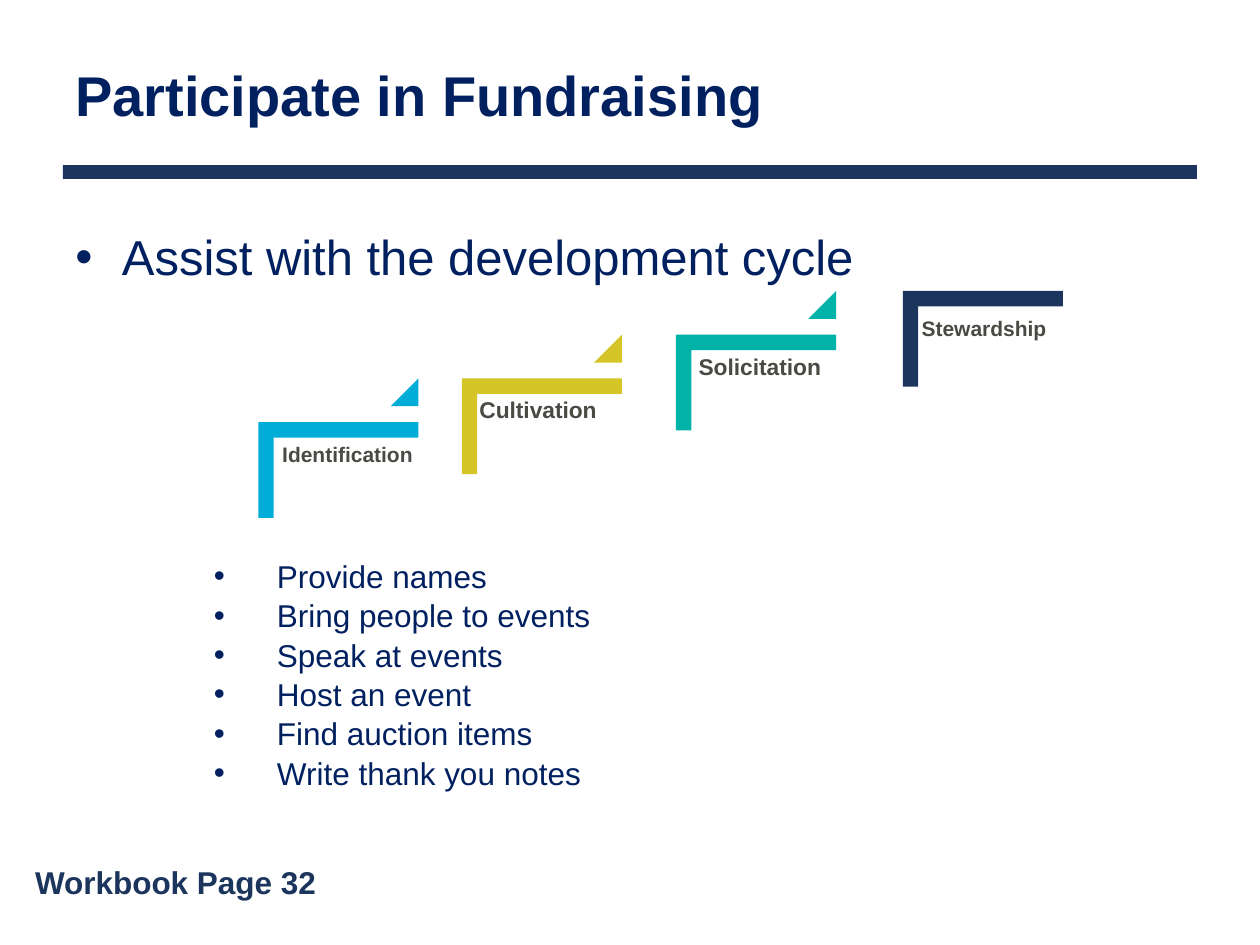
from dataclasses import dataclass

from lxml import etree
from pptx import Presentation
from pptx.dml.color import RGBColor
from pptx.enum.shapes import MSO_SHAPE
from pptx.enum.text import MSO_ANCHOR
from pptx.oxml.ns import qn
from pptx.util import Inches, Pt

RECTANGLE = MSO_SHAPE.RECTANGLE
CORNER = MSO_SHAPE.CORNER
TRIANGLE = MSO_SHAPE.ISOSCELES_TRIANGLE
TOP, MIDDLE = MSO_ANCHOR.TOP, MSO_ANCHOR.MIDDLE

# The slide is a grid of 100 columns by 75 rows
SLIDE_WIDTH, SLIDE_HEIGHT = Inches(10), Inches(7.5)
COLUMN, ROW = SLIDE_WIDTH / 100, SLIDE_HEIGHT / 75


@dataclass(frozen=True)
class Theme:
    font: str = "Arial"
    text: str = "002060"
    navy: str = "1C355D"
    blue: str = "00ADD9"
    yellow: str = "D5C527"
    teal: str = "00B2A8"
    label: str = "4A4A44"
    title_size: int = 32
    body_size: int = 28
    list_size: int = 18


@dataclass(frozen=True)
class Box:
    """A place on the grid, in columns and rows."""
    left: float
    top: float
    width: float
    height: float

    def inside(self, left, top, width, height):
        return Box(self.left + left, self.top + top, width, height)

    def lengths(self):
        return (round(self.left * COLUMN), round(self.top * ROW),
                round(self.width * COLUMN), round(self.height * ROW))


THEME = Theme()


def add_filled_shape(shapes, kind, box, color):
    shape = shapes.add_shape(kind, *box.lengths())
    shape.shadow.inherit = False
    shape.fill.solid()
    shape.fill.fore_color.rgb = RGBColor.from_string(color)
    shape.line.fill.background()
    return shape


def add_text(shapes, box, lines, size, color, bold=False, anchor=TOP,
             line_spacing=None, space_before=0, inset=None):
    text_frame = shapes.add_textbox(*box.lengths()).text_frame
    text_frame.word_wrap = True
    text_frame.vertical_anchor = anchor
    if inset is not None:
        text_frame.margin_left = text_frame.margin_right = inset
        text_frame.margin_top = text_frame.margin_bottom = inset
    text_frame.text = "\n".join(lines)
    for paragraph in text_frame.paragraphs:
        paragraph.line_spacing = line_spacing
        paragraph.space_before = Pt(space_before)
        for run in paragraph.runs:
            run.font.name = THEME.font
            run.font.size = Pt(size)
            run.font.bold = bold
            run.font.color.rgb = RGBColor.from_string(color)
    return text_frame


def add_bullets(text_frame, margin, hanging):
    """Bullet every paragraph; both indents are in columns."""
    for paragraph in text_frame.paragraphs:
        properties = paragraph._p.get_or_add_pPr()
        properties.set("marL", str(round(margin * COLUMN)))
        properties.set("indent", str(round(-hanging * COLUMN)))
        font = etree.SubElement(properties, qn("a:buFont"))
        font.set("typeface", THEME.font)
        etree.SubElement(properties, qn("a:buChar")).set("char", "•")


def add_header(slide, box, title):
    # Title above a thick rule
    add_text(slide.shapes, box.inside(0, 0, box.width, 5.8), [title],
             THEME.title_size, THEME.text, bold=True, anchor=MIDDLE,
             line_spacing=0.85)
    add_filled_shape(slide.shapes, RECTANGLE,
                     box.inside(0, 8.1, box.width, 1.1), THEME.navy)


def add_main_point(slide, box, point):
    text_frame = add_text(slide.shapes, box, [point], THEME.body_size,
                          THEME.text, space_before=3)
    add_bullets(text_frame, 3.7, 3.7)


def add_step(shapes, box, color, label, size, label_left, label_top):
    # The corner is drawn upright and turned a quarter about its centre
    turn = (box.width - box.height) / 2
    corner = add_filled_shape(
        shapes, CORNER, box.inside(turn, -turn, box.height, box.width), color)
    corner.rotation = 90
    corner.adjustments[0] = corner.adjustments[1] = 0.161
    label_box = box.inside(label_left, label_top, 15.7, 10)
    add_text(shapes, label_box, [label], size, THEME.label, bold=True,
             line_spacing=0.9, inset=Inches(0.05))


def add_staircase(slide, box, steps):
    # Each step rises by the same amount; a triangle points to the next one
    shapes = slide.shapes.add_group_shape().shapes
    width, height, rise, triangle = 12.7, 7.6, 3.47, 2.2
    last = len(steps) - 1
    for index, (left, color, *label) in enumerate(steps):
        step = box.inside(left, (last - index) * rise, width, height)
        add_step(shapes, step, color, *label)
        if index < last:
            marker = add_filled_shape(
                shapes, TRIANGLE,
                step.inside(width - triangle, -rise, triangle, triangle), color)
            marker.adjustments[0] = 1


def add_task_list(slide, box, tasks):
    text_frame = add_text(slide.shapes, box, tasks, THEME.list_size,
                          THEME.text, space_before=0.9)
    add_bullets(text_frame, 15, 5)


def add_page_reference(slide, box, reference):
    add_text(slide.shapes, box, [reference], THEME.list_size, THEME.navy,
             bold=True, space_before=1.4)


def main():
    presentation = Presentation()
    presentation.slide_width, presentation.slide_height = SLIDE_WIDTH, SLIDE_HEIGHT
    slide = presentation.slides.add_slide(presentation.slide_layouts[6])

    add_header(slide, Box(5, 5, 90, 9.2), "Participate in Fundraising")
    add_main_point(slide, Box(5, 17.5, 90, 52.5),
                   "Assist with the development cycle")
    # Left edge, colour, label, type size, label offset across and down
    add_staircase(slide, Box(20.5, 23.1, 63.9, 18), [
        (0, THEME.blue, "Identification", 12, 1.4, 1.3),
        (16.15, THEME.yellow, "Cultivation", 13, 0.9, 1.1),
        (33.15, THEME.teal, "Solicitation", 13, 1.3, 1.2),
        (51.15, THEME.navy, "Stewardship", 12, 1, 1.7),
    ])
    add_task_list(slide, Box(6, 43.7, 42.3, 22.2), [
        "Provide names",
        "Bring people to events",
        "Speak at events",
        "Host an event",
        "Find auction items",
        "Write thank you notes",
    ])
    add_page_reference(slide, Box(1.8, 68, 24.4, 4), "Workbook Page 32")

    presentation.save("out.pptx")


if __name__ == "__main__":
    main()
